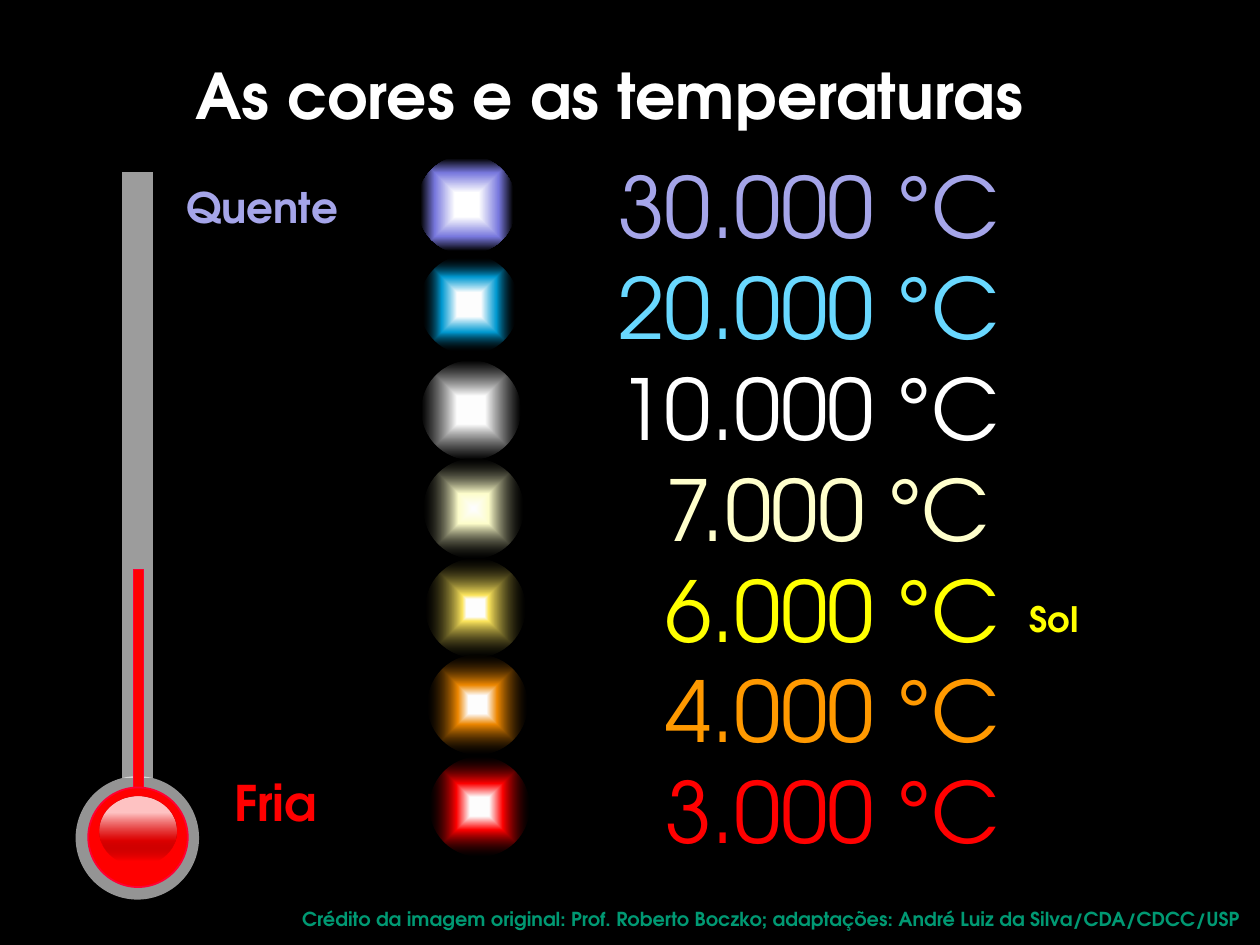
from lxml.etree import SubElement
from pptx import Presentation
from pptx.dml.color import RGBColor
from pptx.enum.shapes import MSO_SHAPE as Preset
from pptx.enum.text import MSO_ANCHOR as Anchor, PP_ALIGN as Align
from pptx.oxml.ns import qn
from pptx.util import Inches, Pt

FONT = "TeX Gyre Adventor"
COLORS = {
    "black": "000000", "white": "FFFFFF", "lilac": "A5A5E9", "violet": "7878DE",
    "sky": "69D8FF", "blue": "00B0F0", "cream": "FFFFCC", "yellow": "FFFF00",
    "gold": "FDE65D", "orange": "FF9900", "amber": "EE8800", "red": "FF0000",
    "crimson": "FF0033", "dark_red": "C00000", "green": "009973",
}
STAR_SIZE = 0.79
STAR_DRIFT = 0.017
DIGIT_INDENT = 0.37
STARS = [
    ("30.000 °C", "lilac", 0, [(24, "white", 100), (64, "violet", 100), (93, "black", 100)]),
    ("20.000 °C", "sky", 0.79, [(24, "white", 100), (55, "blue", 87), (93, "black", 18)]),
    ("10.000 °C", "white", 1.63, [(25, "white", 100), (28, "white", 100), (100, "black", 73)]),
    ("7.000 °C", "cream", 2.41, [(3, "white", 100), (30, "cream", 100), (100, "black", 23)]),
    ("6.000 °C", "yellow", 3.2, [(18, "white", 100), (26, "gold", 100), (100, "black", 23)]),
    ("4.000 °C", "orange", 3.97, [(18, "white", 100), (39, "amber", 100), (100, "black", 23)]),
    ("3.000 °C", "red", 4.78, [(19, "white", 100), (46, "red", 100), (100, "black", 23)]),
]


def rgb(name):
    return RGBColor.from_string(COLORS[name])


def write(paragraph, text, size=20, color="white", bold=True, align=Align.LEFT, indent=0):
    paragraph.alignment = align
    if indent:
        properties = paragraph._p.get_or_add_pPr()
        properties.set("marL", str(Inches(indent)))
        properties.set("indent", "0")
    run = paragraph.add_run()
    run.text = text
    run.font.name = FONT
    run.font.size = Pt(size)
    run.font.bold = bold
    run.font.color.rgb = rgb(color)


def add_text_frame(slide, left, top, width, height, wrap=True):
    box = slide.shapes.add_textbox(Inches(left), Inches(top), Inches(width), Inches(height))
    box.text_frame.word_wrap = wrap
    return box.text_frame


def add_label(slide, box, text, wrap=False, **text_format):
    frame = add_text_frame(slide, *box, wrap=wrap)
    write(frame.paragraphs[0], text, **text_format)


def add_preset(slide, preset, left, top, width, height, fill=None, alpha=100, line=None):
    shape = slide.shapes.add_shape(
        preset, Inches(left), Inches(top), Inches(width), Inches(height))
    shape.shadow.inherit = False
    if fill:
        shape.fill.solid()
        shape.fill.fore_color.rgb = rgb(fill)
        if alpha < 100:
            color = shape._element.spPr.find(qn("a:solidFill"))[0]
            SubElement(color, qn("a:alpha"), val=str(alpha * 1000))
    if line:
        shape.line.color.rgb = rgb(line)
        shape.line.width = Pt(1)
    else:
        shape.line.fill.background()
    return shape


def set_gradient(shape, stops, angle=None):
    shape.fill.gradient()
    gradient = shape._element.spPr.find(qn("a:gradFill"))
    for child in list(gradient):
        gradient.remove(child)
    stop_list = SubElement(gradient, qn("a:gsLst"))
    for position, name, alpha in stops:
        stop = SubElement(stop_list, qn("a:gs"), pos=str(position * 1000))
        color = SubElement(stop, qn("a:srgbClr"), val=COLORS[name])
        if alpha < 100:
            SubElement(color, qn("a:alpha"), val=str(alpha * 1000))
    if angle is None:
        center = SubElement(gradient, qn("a:path"), path="shape")
        SubElement(center, qn("a:fillToRect"), l="50000", t="50000", r="50000", b="50000")
    else:
        SubElement(gradient, qn("a:lin"), ang=str(angle * 60000), scaled="0")


def add_title(slide, left, top, width, height):
    title = slide.shapes.title
    title.left, title.top = Inches(left), Inches(top)
    title.width, title.height = Inches(width), Inches(height)
    title.text_frame.vertical_anchor = Anchor.MIDDLE
    write(title.text_frame.paragraphs[0], "As cores e as temperaturas",
          size=36, align=Align.CENTER)


def add_thermometer(slide, left, top):
    add_preset(slide, Preset.RECTANGLE, left + 0.36, top, 0.26, 4.82,
               fill="white", alpha=61, line="black")
    add_preset(slide, Preset.OVAL, left, top + 4.8, 0.98, 0.98, fill="white", alpha=58)
    add_preset(slide, Preset.RECTANGLE, left + 0.46, top + 3.16, 0.08, 1.85,
               fill="red", line="crimson")
    add_preset(slide, Preset.OVAL, left + 0.1, top + 4.89, 0.79, 0.79,
               fill="red", line="crimson")
    gloss = add_preset(slide, Preset.OVAL, left + 0.19, top + 4.96, 0.61, 0.55)
    set_gradient(gloss, [(24, "white", 76), (64, "dark_red", 54), (93, "black", 0)], angle=90)


def add_stars(slide, left, top):
    for index, (_, _, offset, stops) in enumerate(STARS):
        star = add_preset(slide, Preset.OVAL, left + index * STAR_DRIFT, top + offset,
                          STAR_SIZE, STAR_SIZE)
        set_gradient(star, stops)


def add_temperatures(slide, left, top, width, height):
    frame = add_text_frame(slide, left, top, width, height)
    longest = max(len(text) for text, *_ in STARS)
    for index, (text, color, _, _) in enumerate(STARS):
        paragraph = frame.add_paragraph() if index else frame.paragraphs[0]
        write(paragraph, text, size=48, color=color, bold=False,
              indent=DIGIT_INDENT * (longest - len(text)))


def main():
    presentation = Presentation()
    presentation.slide_width, presentation.slide_height = Inches(10), Inches(7.5)
    slide = presentation.slides.add_slide(presentation.slide_layouts[5])
    slide.background.fill.solid()
    slide.background.fill.fore_color.rgb = rgb("black")

    add_title(slide, 0, 0.29, 9.67, 0.92)
    add_temperatures(slide, 4.81, 1.18, 3.32, 5.76)
    add_label(slide, (1.76, 6.08, 0.87, 0.57), "Fria", size=28, color="red")
    add_label(slide, (1.38, 1.39, 1.42, 0.51), "Quente", size=24, color="lilac")
    add_label(slide, (8.07, 4.69, 0.59, 0.44), "Sol", color="yellow", align=Align.CENTER)
    add_thermometer(slide, 0.6, 1.36)
    add_stars(slide, 3.31, 1.23)
    add_label(slide, (2.3, 7.15, 7.67, 0.29),
              "Crédito da imagem original: Prof. Roberto Boczko; "
              "adaptações: André Luiz da Silva/CDA/CDCC/USP",
              wrap=True, size=11, color="green", align=Align.JUSTIFY)
    presentation.save("out.pptx")


if __name__ == "__main__":
    main()
